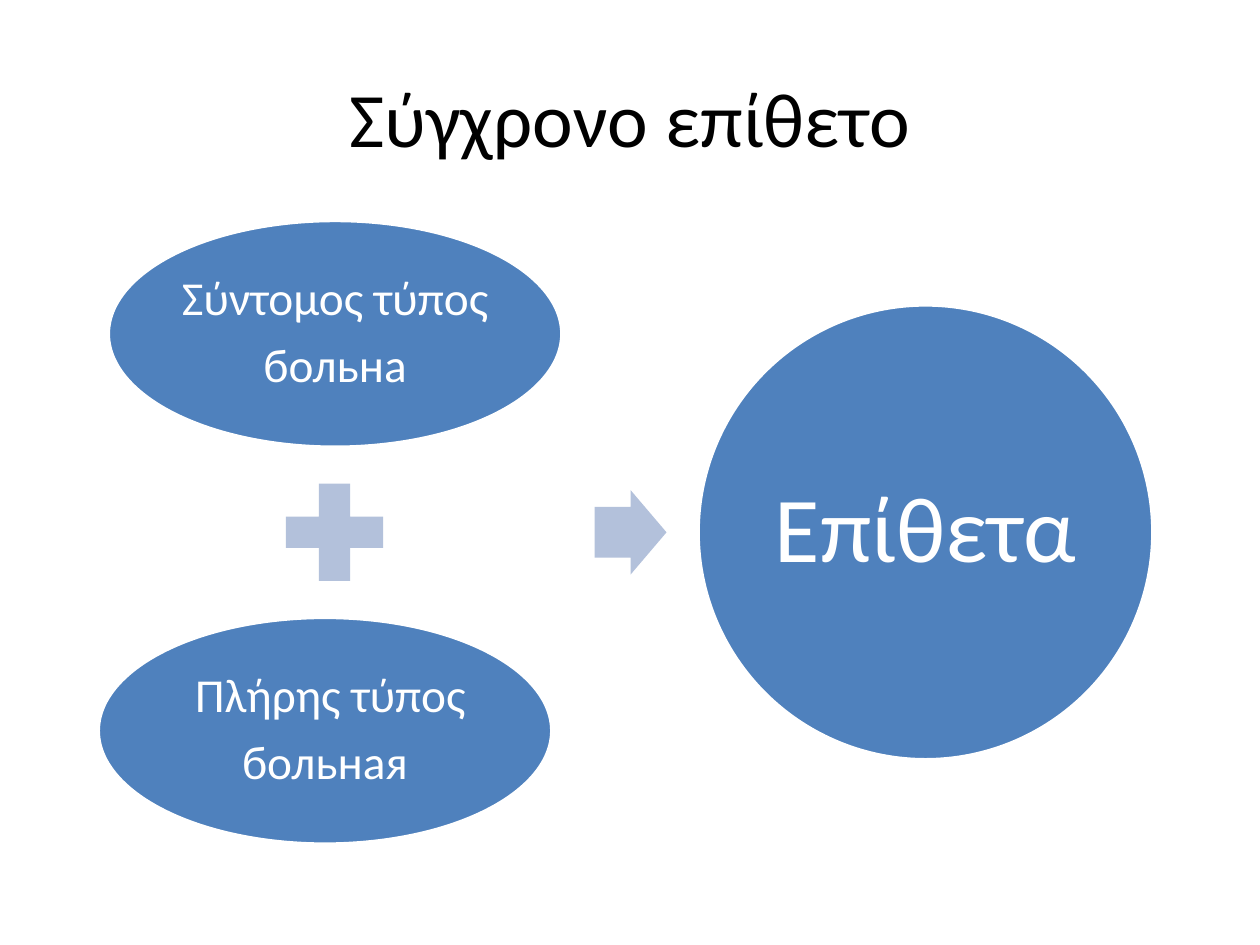
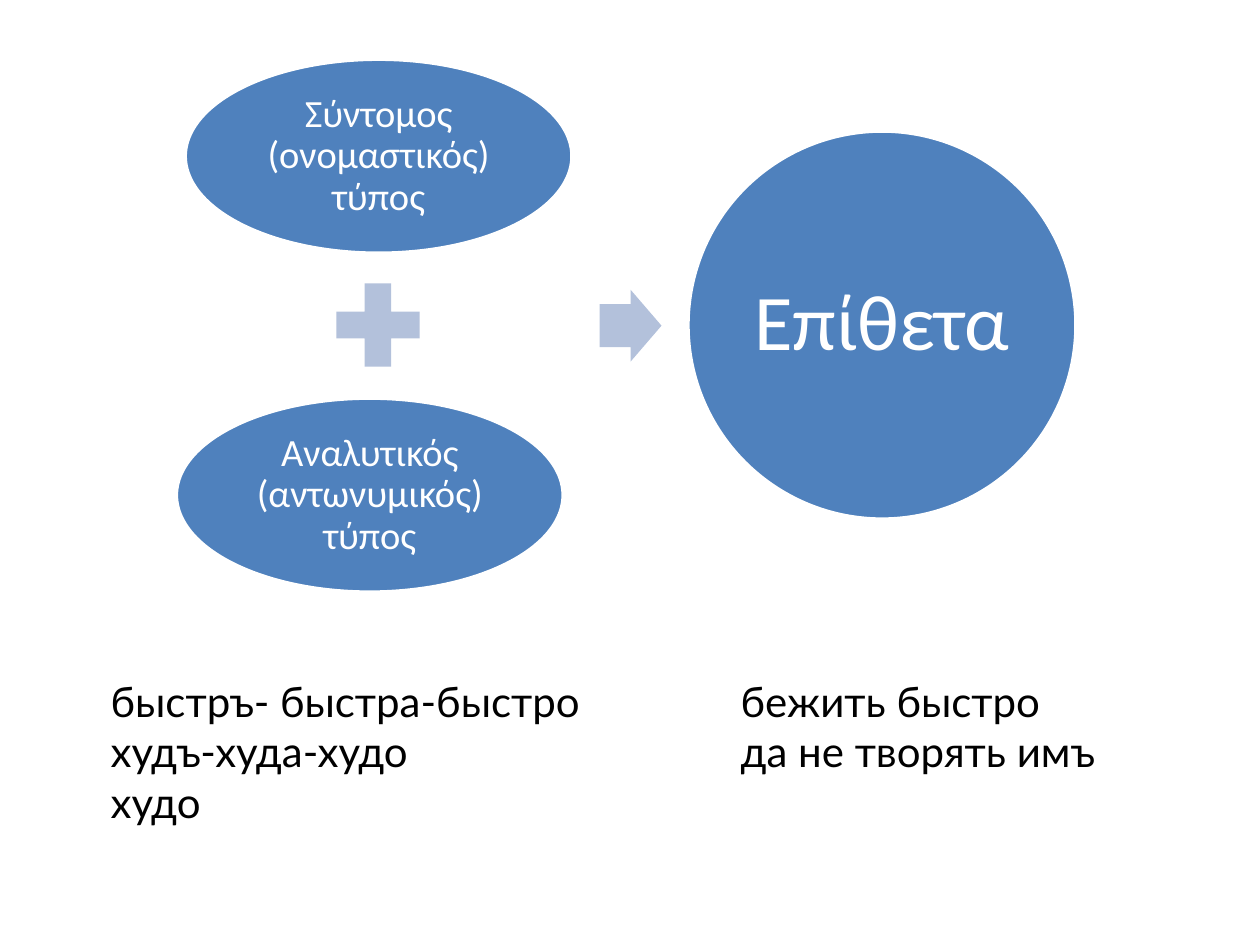
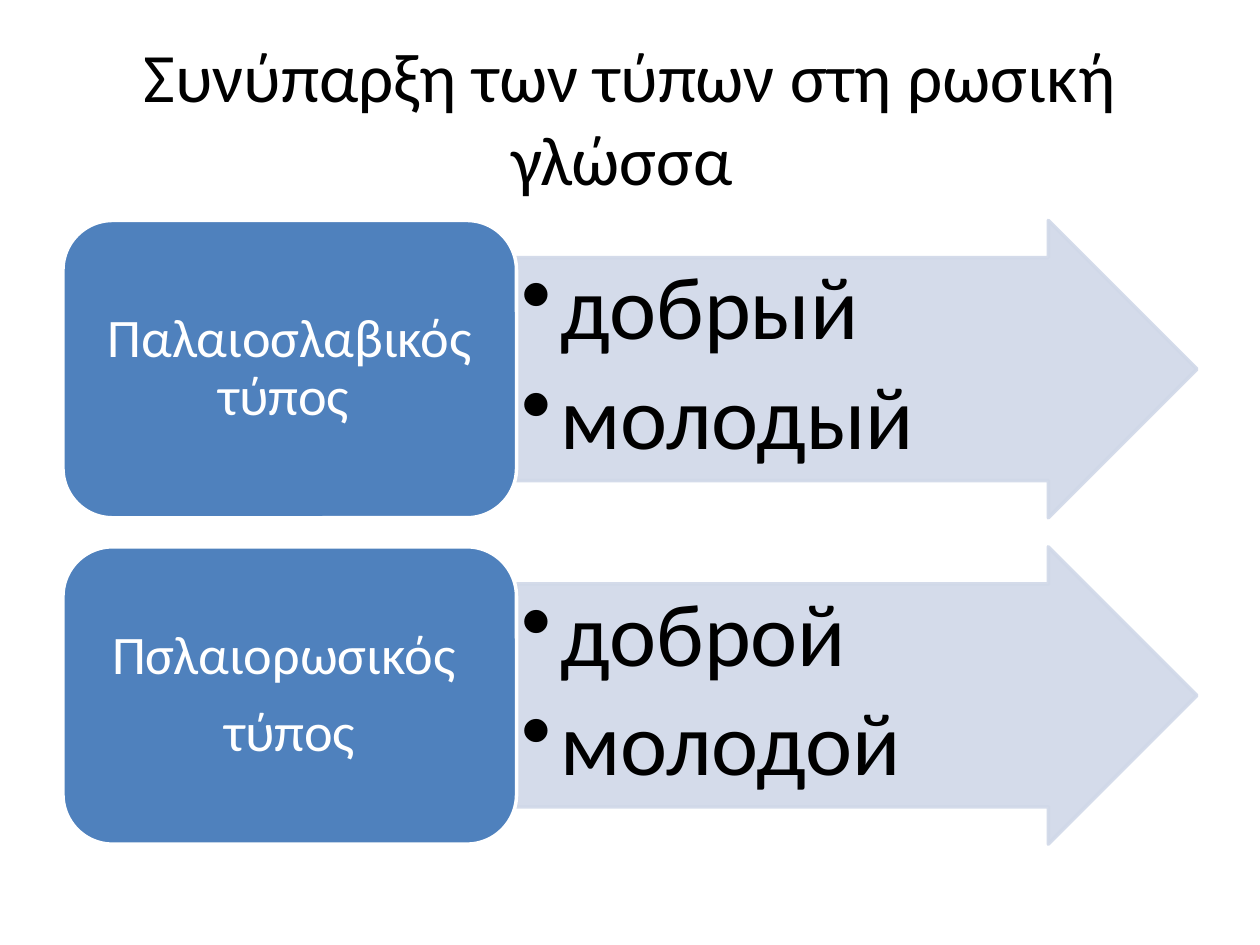
from lxml.etree import SubElement
from pptx import Presentation
from pptx.dml.color import RGBColor
from pptx.enum.shapes import MSO_SHAPE
from pptx.enum.text import MSO_ANCHOR, MSO_AUTO_SIZE, PP_ALIGN
from pptx.oxml.ns import qn
from pptx.util import Pt

COLORS = {
    "ink": "000000",
    "paper": "FFFFFF",
    "term": "4F81BD",
    "sign": "B3C1DB",
    "band": "D0D8E8",
}
EMU_PER_PX = 9144


def px(length):
    return round(length) * EMU_PER_PX


def apply(target, values):
    for name, value in values.items():
        setattr(target, name, value)


class Deck:
    font = "Calibri"
    centered = {"alignment": PP_ALIGN.CENTER}
    tight = {**centered, "line_spacing": 0.9}

    def __init__(self):
        self.presentation = Presentation()
        apply(self.presentation, {"slide_width": px(1000), "slide_height": px(750)})
        self.slide = None

    def new_slide(self):
        self.slide = self.presentation.slides.add_slide(self.presentation.slide_layouts[6])

    def fill_text(self, holder, lines, size, color, style, insets=(10, 5),
                  anchor=MSO_ANCHOR.MIDDLE, font=font, after=0):
        side, top = map(px, insets)
        frame = holder.text_frame
        apply(frame, {
            "word_wrap": True, "vertical_anchor": anchor,
            "margin_left": side, "margin_right": side,
            "margin_top": top, "margin_bottom": top,
        })
        for index, line in enumerate(lines):
            paragraph = frame.paragraphs[0] if index == 0 else frame.add_paragraph()
            apply(paragraph, {**style, "space_after": Pt(round(size * after, 1))})
            run = paragraph.add_run()
            run.text = line
            apply(run.font, {"name": font, "size": Pt(size)})
            run.font.color.rgb = RGBColor.from_string(COLORS[color])
        return frame.paragraphs

    def text(self, box, lines, size, style, **options):
        holder = self.slide.shapes.add_textbox(*map(px, box))
        paragraphs = self.fill_text(holder, lines, size, "ink", style, **options)
        return holder, paragraphs

    def title(self, words, size):
        self.text((50, 30, 900, 125), [words], size, self.centered)

    def shape(self, kind, box, fill, line=None, adjustments=(), opacity=None):
        figure = self.slide.shapes.add_shape(kind, *map(px, box))
        figure.shadow.inherit = False
        for index, value in enumerate(adjustments):
            figure.adjustments[index] = value
        figure.fill.solid()
        figure.fill.fore_color.rgb = RGBColor.from_string(COLORS[fill])
        if line:
            figure.line.color.rgb = RGBColor.from_string(COLORS[line])
            figure.line.width = Pt(2)
        else:
            figure.line.fill.background()
        if opacity:
            for color in figure._element.spPr.iter(qn("a:srgbClr")):
                SubElement(color, qn("a:alpha"), val=str(opacity * 1000))
        return figure

    def term(self, kind, box, lines, size, insets):
        figure = self.shape(kind, box, "term", "paper")
        self.fill_text(figure, lines, size, "paper", self.tight, insets, after=0.35)

    def equation(self, left, top, scale, addends, addend_size, total_size):
        def place(x, y, width, height):
            return left + x * scale, top + y * scale, width * scale, height * scale

        small, large = 4 * scale, 7 * scale
        oval = MSO_SHAPE.OVAL
        self.term(oval, place(8, 0, 360, 180), addends[0], addend_size, (small, small))
        self.shape(MSO_SHAPE.MATH_PLUS, place(135, 195, 105, 105), "sign")
        self.term(oval, place(0, 315, 360, 180), addends[1], addend_size, (small, small))
        self.shape(MSO_SHAPE.RIGHT_ARROW, place(394, 214, 57, 67), "sign",
                   adjustments=(0.6, 0.5))
        self.term(oval, place(476, 67, 361, 361), ["Επίθετα"], total_size, (large, large))

    def examples(self, top, heading, words):
        band = self.shape(MSO_SHAPE.RIGHT_ARROW, (410, top, 540, 236), "band", "band",
                          adjustments=(0.75, 0.5), opacity=90)
        style = {"alignment": PP_ALIGN.LEFT, "level": 1, "line_spacing": 0.9}
        for paragraph in self.fill_text(band, words, 51, "ink", style, (4, 4),
                                        MSO_ANCHOR.TOP, after=0.15):
            properties = paragraph._p.get_or_add_pPr()
            properties.set("marL", str(px(31)))
            properties.set("indent", str(px(-31)))
            SubElement(properties, qn("a:buChar"), char="•")
        self.term(MSO_SHAPE.ROUNDED_RECTANGLE, (50, top, 360, 236), heading, 31, (13, 6))

    def columns(self, box, rows, tab):
        holder, paragraphs = self.text(box, ["\t".join(row) for row in rows], 24,
                                       {"alignment": PP_ALIGN.LEFT},
                                       anchor=MSO_ANCHOR.TOP, font="Lato")
        holder.text_frame.auto_size = MSO_AUTO_SIZE.SHAPE_TO_FIT_TEXT
        for paragraph in paragraphs:
            stops = SubElement(paragraph._p.get_or_add_pPr(), qn("a:tabLst"))
            SubElement(stops, qn("a:tab"), pos=str(px(tab)), algn="l")


def main():
    deck = Deck()

    deck.new_slide()
    deck.title("Σύγχρονο επίθετο", 44)
    deck.equation(78, 175, 1, [["Σύντομος τύπος", "больна"],
                               [" Πλήρης τύπος", "больная"]], 27, 53)

    deck.new_slide()
    deck.equation(140, 47, 0.853, [["Σύντομος (ονομαστικός) τύπος"],
                                   ["Αναλυτικός (αντωνυμικός) τύπος"]], 22, 45)
    deck.columns((78, 531, 867, 91), [
        ("быстръ- быстра-быстро", "бежить быстро"),
        ("худъ-худа-худо", "да не творять имъ худо"),
    ], 500)

    deck.new_slide()
    deck.title("Συνύπαρξη των τύπων στη ρωσική γλώσσα ", 39.6)
    families = [
        (["Παλαιοσλαβικός τύπος "], ["добрый", "молодый"]),
        (["Πσλαιορωσικός ", "τύπος"], ["доброй", "молодой"]),
    ]
    for index, (heading, words) in enumerate(families):
        deck.examples(175 + index * 259, heading, words)

    deck.presentation.save("out.pptx")


if __name__ == "__main__":
    main()
